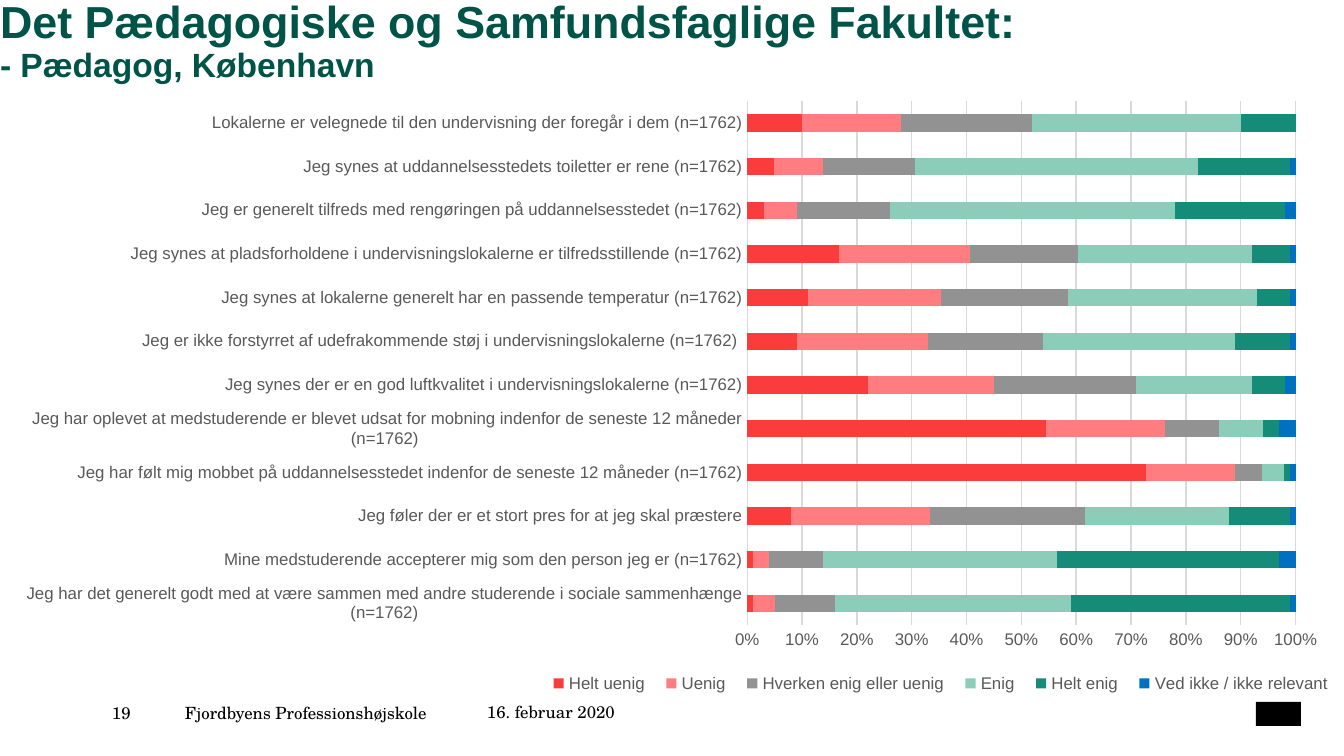
from pptx import Presentation
from pptx.chart.data import CategoryChartData as ChartData
from pptx.dml.color import RGBColor
from pptx.enum.chart import XL_CHART_TYPE as ChartType, XL_LEGEND_POSITION as LegendPlace, XL_TICK_MARK as Tick
from pptx.enum.shapes import MSO_SHAPE as Preset
from pptx.enum.text import MSO_ANCHOR as Anchor, MSO_AUTO_SIZE as AutoSize, PP_ALIGN as Align
from pptx.oxml import parse_xml
from pptx.oxml.ns import nsdecls, qn
from pptx.util import Emu, Pt

SCALE = 914400 / 134.4
STATEMENTS = [
    "Jeg har det generelt godt med at være sammen med andre studerende i sociale sammenhænge (n=1762)",
    "Mine medstuderende accepterer mig som den person jeg er (n=1762)",
    "Jeg føler der er et stort pres for at jeg skal præstere",
    "Jeg har følt mig mobbet på uddannelsesstedet indenfor de seneste 12 måneder (n=1762)",
    "Jeg har oplevet at medstuderende er blevet udsat for mobning indenfor de seneste 12 måneder (n=1762) ",
    "Jeg synes der er en god luftkvalitet i undervisningslokalerne (n=1762)",
    "Jeg er ikke forstyrret af udefrakommende støj i undervisningslokalerne (n=1762) ",
    "Jeg synes at lokalerne generelt har en passende temperatur (n=1762)",
    "Jeg synes at pladsforholdene i undervisningslokalerne er tilfredsstillende (n=1762)",
    "Jeg er generelt tilfreds med rengøringen på uddannelsesstedet (n=1762)",
    "Jeg synes at uddannelsesstedets toiletter er rene (n=1762)",
    "Lokalerne er velegnede til den undervisning der foregår i dem (n=1762)",
]
ANSWERS = [
    ("Helt uenig", "FA3C3C", [1, 1, 8, 72, 55, 22, 9, 11, 17, 3, 5, 10]),
    ("Uenig", "FF7C80", [4, 3, 25, 16, 22, 23, 24, 24, 24, 6, 9, 18]),
    ("Hverken enig eller uenig", "929292", [11, 10, 28, 5, 10, 26, 21, 23, 20, 17, 17, 24]),
    ("Enig", "8CCDB9", [43, 43, 26, 4, 8, 21, 35, 34, 32, 52, 52, 38]),
    ("Helt enig", "148C78", [40, 41, 11, 1, 3, 6, 10, 6, 7, 20, 17, 10]),
    ("Ved ikke / ikke relevant", "0070C0", [1, 3, 1, 1, 3, 2, 1, 1, 1, 2, 1, 0]),
]


def px(*lengths):
    return [Emu(round(length * SCALE)) for length in lengths]


def color(value):
    return RGBColor.from_string(value)


def set_layout(parent, index, x, y, width, height, inner=False):
    for old in parent.findall(qn("c:layout")):
        parent.remove(old)
    target = '<c:layoutTarget val="inner"/>' if inner else ""
    parent.insert(index, parse_xml(
        f'<c:layout {nsdecls("c")}><c:manualLayout>{target}'
        '<c:xMode val="edge"/><c:yMode val="edge"/>'
        f'<c:x val="{x}"/><c:y val="{y}"/><c:w val="{width}"/><c:h val="{height}"/>'
        '</c:manualLayout></c:layout>'))


class SlideBuilder:
    sans = "Arial"
    serif = "TeX Gyre Schola"
    black = "000000"
    green = "005447"
    gray = "595959"
    grid = "D9D9D9"

    def __init__(self, deck):
        self.page = deck.slides.add_slide(deck.slide_layouts[5])

    def style(self, font, size, name, value, bold=False):
        font.size, font.name, font.bold = Pt(size), name, bold
        font.color.rgb = color(value)

    def clear_frame(self, frame):
        frame.margin_left = frame.margin_top = frame.margin_right = frame.margin_bottom = 0
        frame.word_wrap = True
        frame.auto_size = AutoSize.NONE
        frame.vertical_anchor = Anchor.TOP

    def title(self, lines, sizes, *place):
        box = self.page.shapes.title
        box.left, box.top, box.width, box.height = px(*place)
        self.clear_frame(box.text_frame)
        para = box.text_frame.paragraphs[0]
        para.text = "\v".join(lines)
        para.alignment, para.line_spacing = Align.LEFT, 0.9
        for span, size in zip(para.runs, sizes):
            self.style(span.font, size, self.sans, self.green, True)

    def footer(self, text, *place):
        box = self.page.shapes.add_textbox(*px(*place))
        self.clear_frame(box.text_frame)
        box.text_frame.text = text
        self.style(box.text_frame.paragraphs[0].runs[0].font, 9, self.serif, self.black)

    def block(self, *place):
        shape = self.page.shapes.add_shape(Preset.RECTANGLE, *px(*place))
        shape.shadow.inherit = False
        shape.fill.solid()
        shape.fill.fore_color.rgb = color(self.black)
        shape.line.fill.background()

    def line(self, line):
        line.color.rgb, line.width = color(self.grid), Pt(0.75)

    def chart(self, categories, answers, *place):
        data = ChartData(number_format="0")
        data.categories = categories
        for name, _, values in answers:
            data.add_series(name, values)
        chart = self.page.shapes.add_chart(ChartType.BAR_STACKED_100, *px(*place), data).chart
        chart.has_title = False
        self.style(chart.font, 10, self.sans, self.black)
        plot = chart.plots[0]
        plot.gap_width, plot.overlap, plot.vary_by_categories = 150, 100, False
        for series, (_, fill, _) in zip(plot.series, answers):
            series.format.fill.solid()
            series.format.fill.fore_color.rgb = color(fill)
            series.invert_if_negative = False
        for axis in (chart.category_axis, chart.value_axis):
            axis.major_tick_mark = axis.minor_tick_mark = Tick.NONE
            self.style(axis.tick_labels.font, 9, self.sans, self.gray)
        self.line(chart.category_axis.format.line)
        values = chart.value_axis
        values.format.line.fill.background()
        values.has_major_gridlines = True
        self.line(values.major_gridlines.format.line)
        values.major_unit = 0.1
        values.tick_labels.number_format = "0%"
        values.tick_labels.number_format_is_linked = False
        chart.has_legend = True
        chart.legend.position = LegendPlace.BOTTOM
        chart.legend.include_in_layout = False
        self.style(chart.legend.font, 9, self.sans, self.gray)
        root = chart.element.find(qn("c:chart"))
        set_layout(root.find(qn("c:plotArea")), 0, 0.556, 0.02, 0.408, 0.855, True)
        set_layout(root.find(qn("c:legend")), 1, 0.4, 0.94, 0.6, 0.06)


def main():
    deck = Presentation()
    deck.slide_width, deck.slide_height = px(1344, 756)
    slide = SlideBuilder(deck)
    slide.footer("Fjordbyens Professionshøjskole", 185, 703, 280, 20)
    slide.block(1256, 702, 45, 24)
    slide.footer("19", 112, 703, 62, 20)
    slide.title(["Det Pædagogiske og Samfundsfaglige Fakultet:", "- Pædagog, København"],
                [24, 18], 0, 0, 1101, 145)
    slide.footer("16. februar 2020", 487, 702, 376, 20)
    slide.chart(STATEMENTS, ANSWERS, 0, 89, 1344, 613)
    deck.save("out.pptx")


if __name__ == "__main__":
    main()
